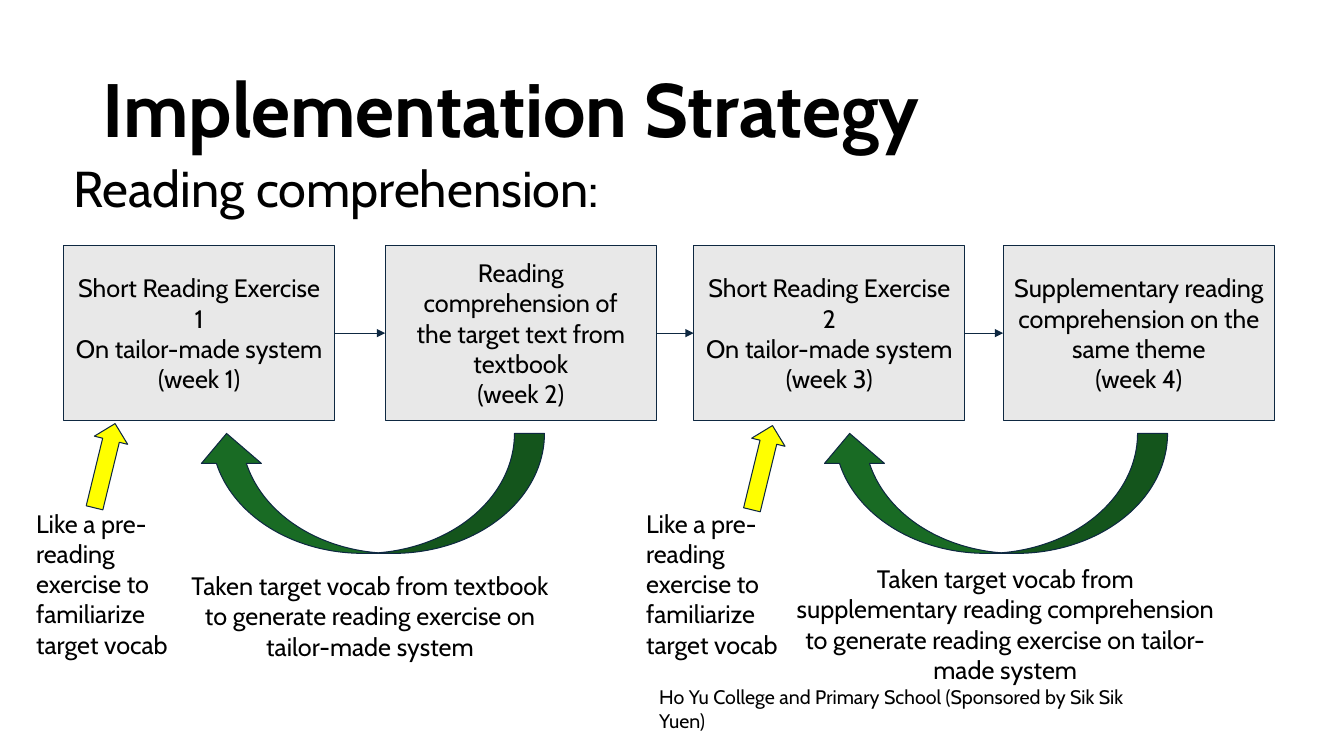
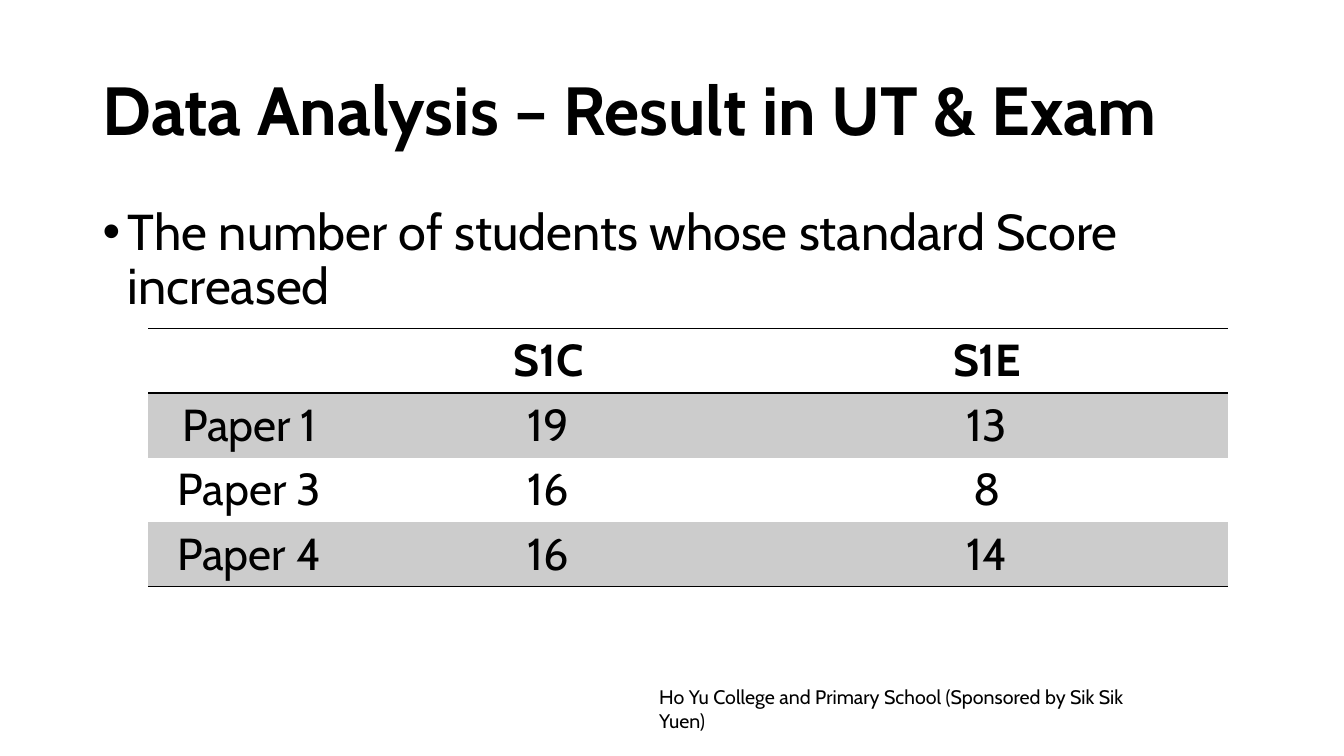
from lxml.etree import SubElement
from pptx import Presentation
from pptx.dml.color import RGBColor
from pptx.enum.shapes import MSO_CONNECTOR as Connector, MSO_SHAPE as Shape
from pptx.enum.text import MSO_ANCHOR as Anchor, PP_ALIGN as Align
from pptx.oxml.ns import qn
from pptx.util import Inches, Pt

BLACK = RGBColor(0x00, 0x00, 0x00)
NAVY = RGBColor(0x0E, 0x28, 0x41)
LIGHT_GREY = RGBColor(0xE8, 0xE8, 0xE8)
BAND_GREY = RGBColor(0xCC, 0xCC, 0xCC)
GREEN = RGBColor(0x19, 0x6B, 0x24)
YELLOW = RGBColor(0xFF, 0xFF, 0x00)
FONT = "Cabin"
PLAIN_TABLE = "{2D5ABB26-0587-4C30-8999-92F81FD0307C}"
FOOTER = "Ho Yu College and Primary School (Sponsored by Sik Sik Yuen)"

# Week boxes: left edges, then the shared row geometry
STEP_LEFTS = (0.63, 3.82, 6.88, 9.95)
STEP_TOP, STEP_WIDTH, STEP_HEIGHT = 2.44, 2.69, 1.73
STEPS = (
    "Short Reading Exercise 1\nOn tailor-made system\n(week 1)",
    "Reading comprehension of\nthe target text from textbook\n(week 2)",
    "Short Reading Exercise 2\nOn tailor-made system\n(week 3)",
    "Supplementary reading comprehension on the same theme\n(week 4)",
)
PREPARATION = "Like a pre-reading exercise to familiarize target vocab"
VOCAB_TEXTBOOK = ("Taken target vocab from textbook to generate reading "
                  "exercise on tailor-made system")
VOCAB_SUPPLEMENT = ("Taken target vocab from supplementary reading comprehension "
                    "to generate reading exercise on tailor-made system")

RESULTS = (
    ("", "S1C", "S1E"),
    ("Paper 1", "19", "13"),
    ("Paper 3", "16", "8"),
    ("Paper 4", "16", "14"),
)
COLUMN_WIDTHS = (2.01, 3.92, 4.78)
ROW_HEIGHT = 0.64


def write(frame, text, size, align=Align.LEFT, bold=False, spacing=None):
    frame.text = text
    for para in frame.paragraphs:
        para.alignment = align
        para.line_spacing = spacing
        for span in para.runs:
            span.font.name = FONT
            span.font.size = Pt(size)
            span.font.bold = bold
            span.font.color.rgb = BLACK


def add_text(page, area, text, size, inset=0.05, anchor=Anchor.TOP, **style):
    box = page.shapes.add_textbox(*map(Inches, area))
    frame = box.text_frame
    frame.word_wrap = True
    frame.vertical_anchor = anchor
    frame.margin_top = frame.margin_bottom = Inches(inset)
    write(frame, text, size, **style)
    return frame


def add_bullet(para):
    props = para._p.get_or_add_pPr()
    props.set("marL", str(Inches(0.25)))
    props.set("indent", str(Inches(-0.25)))
    SubElement(props, qn("a:buFont")).set("typeface", "Arial")
    SubElement(props, qn("a:buChar")).set("char", "•")


def add_shape(page, kind, area, fill):
    shape = page.shapes.add_shape(kind, *map(Inches, area))
    shape.shadow.inherit = False
    shape.fill.solid()
    shape.fill.fore_color.rgb = fill
    shape.line.color.rgb = NAVY
    shape.line.width = Pt(0.75)
    return shape


def add_step(page, left, text):
    step = add_shape(page, Shape.RECTANGLE,
                     (left, STEP_TOP, STEP_WIDTH, STEP_HEIGHT), LIGHT_GREY)
    frame = step.text_frame
    frame.word_wrap = True
    frame.vertical_anchor = Anchor.MIDDLE
    frame.margin_top = frame.margin_bottom = Inches(0.1)
    write(frame, text, 18, align=Align.CENTER)


def add_arrow(page, start, end, y):
    arrow = page.shapes.add_connector(
        Connector.STRAIGHT, Inches(start), Inches(y), Inches(end), Inches(y))
    arrow.line.color.rgb = NAVY
    arrow.line.width = Pt(0.75)
    SubElement(arrow.line._get_or_add_ln(), qn("a:tailEnd")).set("type", "triangle")
    SubElement(arrow._element.spPr, qn("a:effectLst"))


def add_feedback(page, arrow_left, text_area, text):
    arrow = add_shape(page, Shape.CURVED_UP_ARROW, (arrow_left, 4.3, 3.45, 1.19), GREEN)
    arrow._element.spPr.get_or_add_xfrm().set("flipH", "1")
    add_text(page, text_area, text, 18, inset=0.1, align=Align.CENTER)


def add_preparation(page, arrow_left, arrow_top, text_left):
    arrow = add_shape(page, Shape.RIGHT_ARROW, (arrow_left, arrow_top, 0.86, 0.34), YELLOW)
    arrow.rotation = 283.7
    add_text(page, (text_left, 4.94, 1.56, 1.19), PREPARATION, 18, inset=0.1)


def add_border(cell, side):
    line = SubElement(cell._tc.get_or_add_tcPr(), qn(f"a:ln{side}"), w=str(Pt(1)))
    fill = SubElement(line, qn("a:solidFill"))
    SubElement(fill, qn("a:srgbClr")).set("val", str(BLACK))


def add_results(page, left, top):
    shape = page.shapes.add_table(
        len(RESULTS), len(COLUMN_WIDTHS), Inches(left), Inches(top),
        Inches(sum(COLUMN_WIDTHS)), Inches(ROW_HEIGHT * len(RESULTS)))
    table = shape.table
    table._tbl.tblPr.find(qn("a:tableStyleId")).text = PLAIN_TABLE
    for column, width in zip(table.columns, COLUMN_WIDTHS):
        column.width = Inches(width)
    for r, values in enumerate(RESULTS):
        sides = {0: "TB", len(RESULTS) - 1: "B"}.get(r, "")
        for c, value in enumerate(values):
            cell = table.cell(r, c)
            write(cell.text_frame, value, 32, align=Align.CENTER, bold=r == 0)
            for side in sides:
                add_border(cell, side)
            if r % 2:
                cell.fill.solid()
                cell.fill.fore_color.rgb = BAND_GREY
            else:
                cell.fill.background()


def add_page(deck, title, title_size):
    page = deck.slides.add_slide(deck.slide_layouts[6])
    add_text(page, (6.44, 6.75, 5.1, 0.34), FOOTER, 14)
    add_text(page, (0.92, 0.4, 11.5, 1.45), title, title_size,
             anchor=Anchor.MIDDLE, bold=True, spacing=0.9)
    return page


def build_strategy(deck):
    page = add_page(deck, "Implementation Strategy", 54)
    add_text(page, (0.63, 1.58, 11.5, 4.76), "Reading comprehension:", 36, spacing=0.9)
    # Weekly sequence
    for left, text in zip(STEP_LEFTS, STEPS):
        add_step(page, left, text)
    for left, following in zip(STEP_LEFTS, STEP_LEFTS[1:]):
        add_arrow(page, left + STEP_WIDTH, following, STEP_TOP + STEP_HEIGHT / 2)
    # Vocabulary fed back into the exercises
    add_feedback(page, 1.95, (1.79, 5.56, 3.76, 0.77), VOCAB_TEXTBOOK)
    add_feedback(page, 8.13, (7.79, 5.49, 4.36, 0.77), VOCAB_SUPPLEMENT)
    # Purpose of the short exercises
    add_preparation(page, 0.61, 4.45, 0.26)
    add_preparation(page, 7.13, 4.47, 6.31)


def build_results(deck):
    page = add_page(deck, "Data Analysis – Result in UT & Exam", 48.6)
    frame = add_text(page, (0.92, 2, 11.5, 4.76),
                     "The number of students whose standard Score increased",
                     36, spacing=0.9)
    add_bullet(frame.paragraphs[0])
    add_results(page, 1.47, 3.26)


def main():
    deck = Presentation()
    deck.slide_width, deck.slide_height = Inches(13.33), Inches(7.5)
    build_strategy(deck)
    build_results(deck)
    deck.save("out.pptx")


if __name__ == "__main__":
    main()
